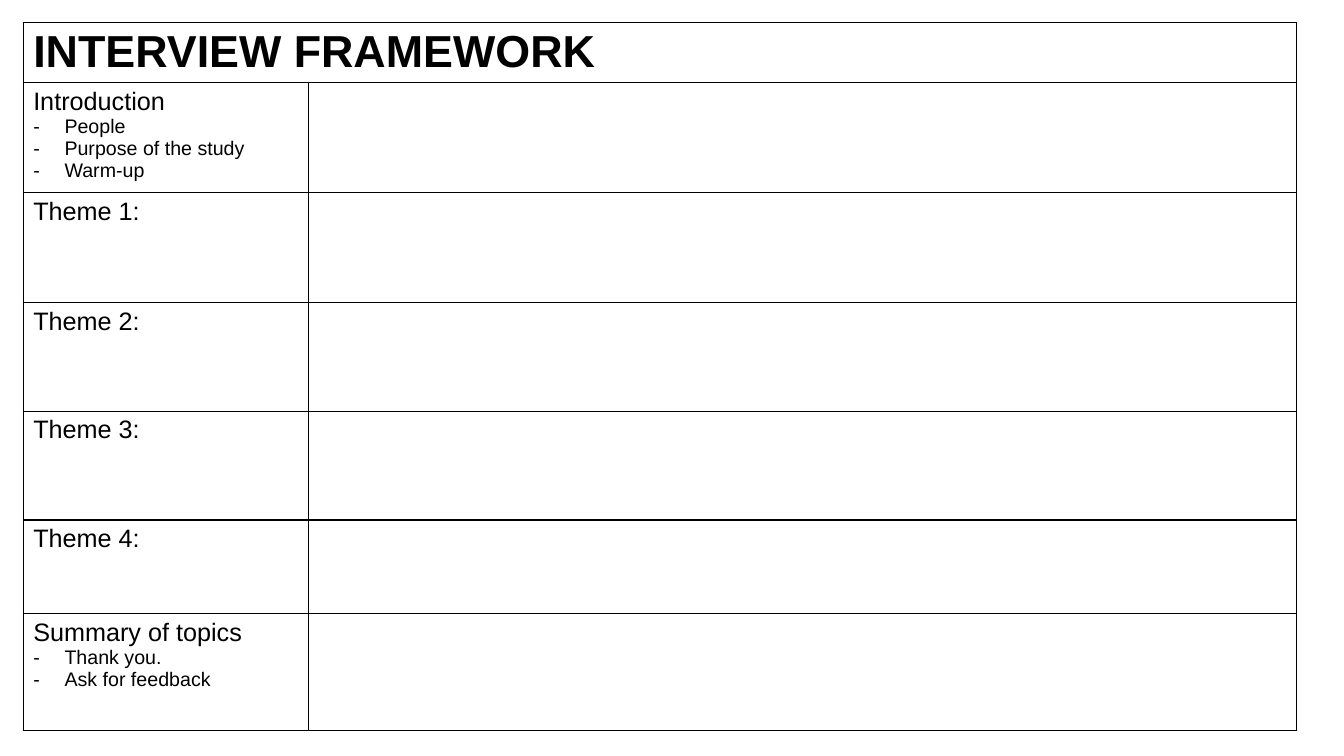
from pptx import Presentation
from pptx.dml.color import RGBColor
from pptx.oxml.ns import qn
from pptx.util import Inches, Pt
from lxml.etree import SubElement as Sub

BLACK = RGBColor(0, 0, 0)
WHITE = RGBColor(255, 255, 255)
FONT = "Arial"
COLS = [2.83, 9.8]
ROWS = [0.5, 1.09, 1.09, 1.08, 1.08, 0.93, 1.16]
TITLE = "INTERVIEW FRAMEWORK"
TOPICS = [
    ("Introduction", ["People", "Purpose of the study", "Warm-up"]),
    *[(f"Theme {n}:", []) for n in range(1, 5)],
    ("Summary of topics", ["Thank you.", "Ask for feedback"]),
]


def frame(cell):
    """Give the cell a thin black border and a white fill."""
    props = cell._tc.get_or_add_tcPr()
    for side in ("lnL", "lnR", "lnT", "lnB"):
        line = Sub(props, qn(f"a:{side}"), w=str(Pt(1)))
        fill = Sub(line, qn("a:solidFill"))
        Sub(fill, qn("a:srgbClr"), val=str(BLACK))
    cell.fill.solid()
    cell.fill.fore_color.rgb = WHITE


def style(para, size, bold=False):
    for run in para.runs:
        font = run.font
        font.name, font.size, font.bold = FONT, Pt(size), bold
        font.color.rgb = BLACK


def dash(para):
    """Turn the paragraph into a dashed list item."""
    props = para._p.get_or_add_pPr()
    indent = Inches(0.31)
    props.set("marL", str(indent))
    props.set("indent", str(-indent))
    Sub(props, qn("a:buFont"), typeface=FONT)
    Sub(props, qn("a:buChar"), char="-")


def topic(cell, head, items):
    cell.text_frame.text = "\n".join([head, *items])
    first, *rest = cell.text_frame.paragraphs
    style(first, 18)
    for para in rest:
        dash(para)
        style(para, 14)


def grid(slide, left, top):
    """Place the interview table with its corner at left, top."""
    shape = slide.shapes.add_table(
        len(ROWS), len(COLS), Inches(left), Inches(top),
        Inches(sum(COLS)), Inches(sum(ROWS)))
    table = shape.table
    table.first_row = table.horz_banding = False
    for col, width in zip(table.columns, COLS):
        col.width = Inches(width)
    for row, height in zip(table.rows, ROWS):
        row.height = Inches(height)
    for cell in table.iter_cells():
        frame(cell)

    title = table.cell(0, 0)
    title.merge(table.cell(0, 1))
    title.text_frame.text = TITLE
    style(title.text_frame.paragraphs[0], 32, True)
    for row, (head, items) in enumerate(TOPICS, 1):
        topic(table.cell(row, 0), head, items)


def main():
    deck = Presentation()
    deck.slide_width, deck.slide_height = Inches(13.33), Inches(7.5)
    slide = deck.slides.add_slide(deck.slide_layouts[6])
    grid(slide, 0.23, 0.22)
    deck.save("out.pptx")


if __name__ == "__main__":
    main()
